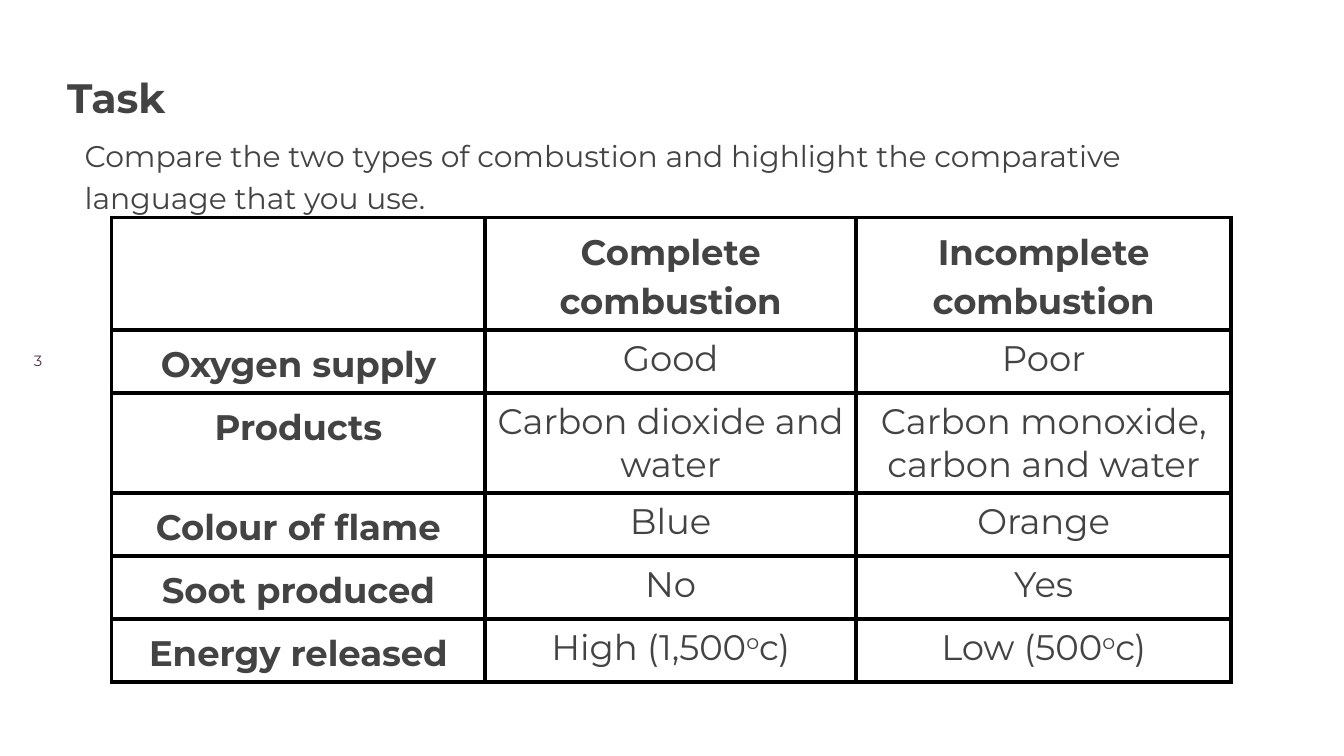
from lxml import etree
from pptx import Presentation
from pptx.dml.color import RGBColor
from pptx.enum.text import MSO_AUTO_SIZE, PP_ALIGN
from pptx.oxml.ns import qn
from pptx.util import Cm, Pt

CENTER = PP_ALIGN.CENTER
GROW = MSO_AUTO_SIZE.SHAPE_TO_FIT_TEXT

COLORS = {"text": "434343", "number": "4B3241", "border": "000000"}
FONT = "Montserrat"
LINE_SPACING = 1.15
BORDER_WIDTH = Pt(2.25)

# A caret pair marks superscript text
ROWS = [
    ["", "Complete combustion", "Incomplete combustion"],
    ["Oxygen supply", "Good", "Poor"],
    ["Products", "Carbon dioxide and water", "Carbon monoxide, carbon and water"],
    ["Colour of flame", "Blue", "Orange"],
    ["Soot produced", "No", "Yes"],
    ["Energy released", "High (1,500^o^c)", "Low (500^o^c)"],
]
COLUMN_WIDTHS = [7.06, 7.01, 7.09]
ROW_HEIGHTS = [2.13, 1.19, 1.89, 1.19, 1.19, 1.19]


class TaskSlide:
    """Holds the style and the current page."""

    def __init__(self, page):
        self.page = page

    def add_spans(self, para, text, size, color="text", bold=False):
        for index, part in enumerate(text.split("^")):
            span = para.add_run()
            span.text = part
            span.font.name = FONT
            span.font.size = Pt(size)
            span.font.bold = bold
            span.font.color.rgb = RGBColor.from_string(COLORS[color])
            if index % 2:
                span.font._element.set("baseline", "30000")

    def text(self, text, left, top, width, height, size, inset=0,
             spacing=LINE_SPACING, grow=False, **style):
        box = self.page.shapes.add_textbox(Cm(left), Cm(top), Cm(width), Cm(height))
        frame = box.text_frame
        frame.word_wrap = True
        if grow:
            frame.auto_size = GROW
        frame.margin_left = frame.margin_right = Cm(inset)
        frame.margin_top = frame.margin_bottom = Cm(inset)
        para = frame.paragraphs[0]
        para.line_spacing = spacing
        self.add_spans(para, text, size, **style)

    def border(self, cell):
        properties = cell._tc.get_or_add_tcPr()
        for side in ("a:lnL", "a:lnR", "a:lnT", "a:lnB"):
            line = etree.SubElement(properties, qn(side), w=str(BORDER_WIDTH))
            fill = etree.SubElement(line, qn("a:solidFill"))
            etree.SubElement(fill, qn("a:srgbClr"), val=COLORS["border"])

    def table(self, rows, left, top, widths, heights, size, inset):
        table = self.page.shapes.add_table(
            len(rows), len(widths), Cm(left), Cm(top),
            Cm(sum(widths)), Cm(sum(heights))).table
        table.first_row = table.horz_banding = False
        for column, width in zip(table.columns, widths):
            column.width = Cm(width)
        for row, height in zip(table.rows, heights):
            row.height = Cm(height)
        for row_index, texts in enumerate(rows):
            for column_index, text in enumerate(texts):
                cell = table.cell(row_index, column_index)
                self.border(cell)
                cell.fill.background()
                cell.margin_left = cell.margin_right = Cm(inset)
                cell.margin_top = cell.margin_bottom = Cm(inset)
                if not text:
                    continue
                heading = row_index == 0 or column_index == 0
                para = cell.text_frame.paragraphs[0]
                para.alignment = CENTER
                if heading:
                    para.line_spacing = LINE_SPACING
                self.add_spans(para, text, size, bold=heading)


def main():
    deck = Presentation()
    deck.slide_width, deck.slide_height = Cm(25.4), Cm(14.29)
    slide = TaskSlide(deck.slides.add_slide(deck.slide_layouts[6]))

    # Page number
    slide.text("3", 0.64, 6.65, 0.99, 0.25, 8, spacing=1.0, color="number")

    # Comparison table
    slide.table(ROWS, 2.11, 4.11, COLUMN_WIDTHS, ROW_HEIGHTS, 19, 0.13)

    # Instruction and title
    slide.text("Compare the two types of combustion and highlight the "
               "comparative language that you use.",
               1.35, 2.26, 22.78, 1.98, 16, inset=0.25, grow=True)
    slide.text("Task", 1.27, 1.24, 21.87, 1.04, 22, bold=True)

    deck.save("out.pptx")


if __name__ == "__main__":
    main()
